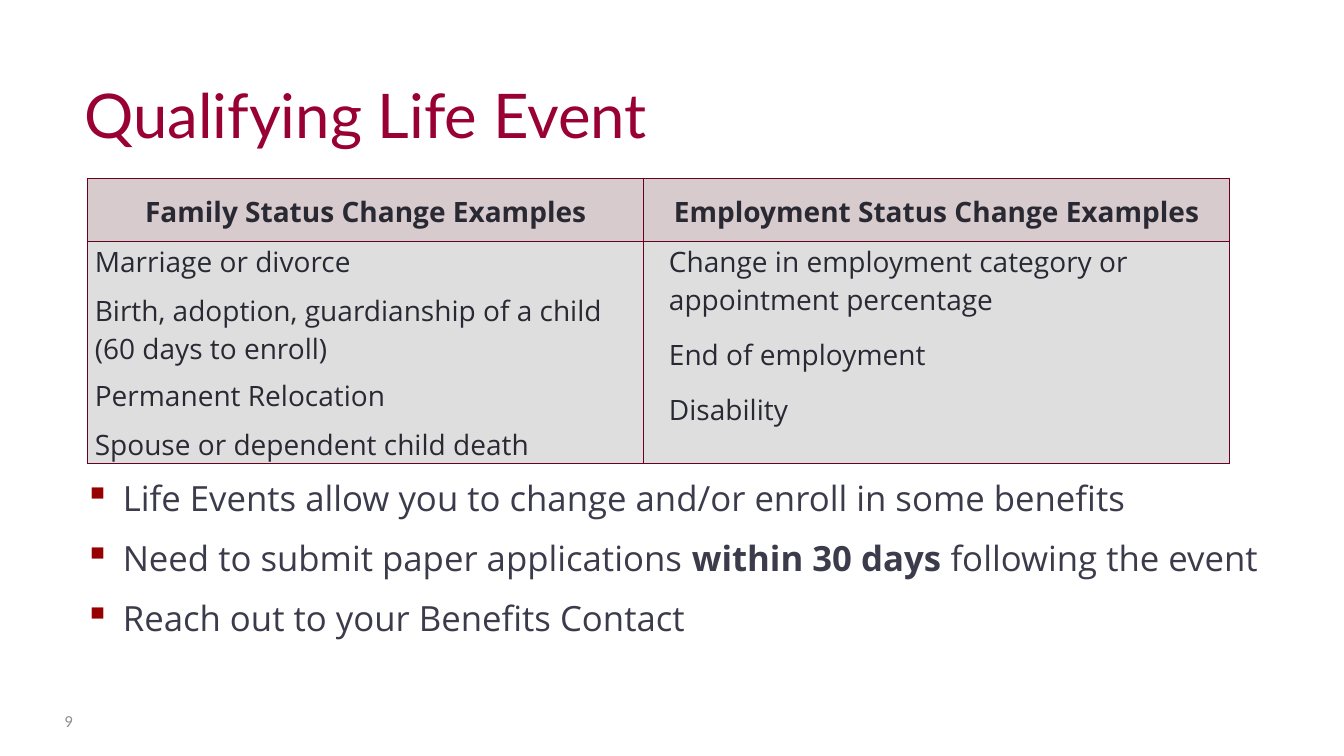
from lxml import etree
from pptx import Presentation, util as u
from pptx.dml.color import RGBColor
from pptx.enum import text as t
from pptx.oxml import ns

WINE = RGBColor(0x99, 0x00, 0x33)
EDGE = RGBColor(0x68, 0x00, 0x1F)
MARK = RGBColor(0x96, 0x00, 0x00)
INK = RGBColor(0x29, 0x29, 0x34)
SLATE = RGBColor(0x3B, 0x3B, 0x4B)
GRAY = RGBColor(0x8E, 0x8E, 0x90)
ROSE = RGBColor(0xD8, 0xCB, 0xCD)
PALE = RGBColor(0xDE, 0xDE, 0xDE)

WIDE, HIGH = u.Inches(13.33), u.Inches(7.5)
HEADS = ["Family Status Change Examples", "Employment Status Change Examples"]
FAMILY = [
    ("Marriage or divorce", 8),
    ("Birth, adoption, guardianship of a child (60 days to enroll)", 6),
    ("Permanent Relocation", 8),
    ("Spouse or dependent child death", 8),
]
JOBS = [
    "Change in employment category or appointment percentage",
    "End of employment",
    "Disability",
]
POINTS = [
    [("Life Events allow you to change and/or enroll in some benefits", False)],
    [("Need to submit paper applications ", False), ("within 30 days ", True),
     ("following the event", False)],
    [("Reach out to your Benefits Contact", False)],
]


def share(left, top, width, height):
    return (int(WIDE * left / 100), int(HIGH * top / 100),
            int(WIDE * width / 100), int(HIGH * height / 100))


def style(par, name, size, color, bold=False):
    font = par.font
    font.name, font.size, font.bold = name, u.Pt(size), bold
    font.color.rgb = color


def frame(slide, box, anchor):
    body = slide.shapes.add_textbox(*box).text_frame
    body.word_wrap = True
    body.vertical_anchor = anchor
    return body


def label(slide, box, words, anchor, *look):
    par = frame(slide, box, anchor).paragraphs[0]
    par.add_run().text = words
    style(par, *look)


def lines(body, count):
    return [body.paragraphs[0]] + [body.add_paragraph() for _ in range(count - 1)]


def solid(parent, color):
    fill = etree.SubElement(parent, ns.qn("a:solidFill"))
    etree.SubElement(fill, ns.qn("a:srgbClr"), val=str(color))


def dress(cell, color):
    cell.fill.solid()
    cell.fill.fore_color.rgb = color
    cell.margin_left = cell.margin_right = u.Inches(0.07)
    cell.margin_top, cell.margin_bottom = u.Inches(0.01), 0
    props = cell._tc.get_or_add_tcPr()
    for spot, side in enumerate("LRTB"):
        line = etree.Element(ns.qn("a:ln" + side), w=str(u.Pt(1)))
        solid(line, EDGE)
        props.insert(spot, line)


def events(slide, box):
    table = slide.shapes.add_table(2, 2, *box).table
    for col, part in zip(table.columns, (0.487, 0.513)):
        col.width = int(box[2] * part)
    for row, part in zip(table.rows, (0.22, 0.78)):
        row.height = int(box[3] * part)
    for col, head in enumerate(HEADS):
        cell = table.cell(0, col)
        dress(cell, ROSE)
        cell.vertical_anchor = t.MSO_ANCHOR.MIDDLE
        par = cell.text_frame.paragraphs[0]
        par.add_run().text = head
        par.alignment = t.PP_ALIGN.CENTER
        par.line_spacing, par.space_after = 1.07, u.Pt(8)
        style(par, "Open Sans", 20, INK, True)
    sides = ([(words, 0, after, 0) for words, after in FAMILY],
             [(words, 6 if i else 0, 6, 0.18) for i, words in enumerate(JOBS)])
    for col, items in enumerate(sides):
        cell = table.cell(1, col)
        dress(cell, PALE)
        for par, item in zip(lines(cell.text_frame, len(items)), items):
            words, before, after, indent = item
            par.add_run().text = words
            par.space_before, par.space_after = u.Pt(before), u.Pt(after)
            par._p.get_or_add_pPr().set("marL", str(u.Inches(indent)))
            style(par, "Open Sans", 20, INK)


def bullet(par):
    props = par._p.get_or_add_pPr()
    props.set("marL", str(u.Inches(0.38)))
    props.set("indent", str(-u.Inches(0.38)))
    tint = etree.SubElement(props, ns.qn("a:buClr"))
    etree.SubElement(tint, ns.qn("a:srgbClr"), val=str(MARK))
    etree.SubElement(props, ns.qn("a:buChar"), char="▪")


def notes(slide, box):
    body = frame(slide, box, t.MSO_ANCHOR.TOP)
    for par, runs in zip(lines(body, len(POINTS)), POINTS):
        bullet(par)
        par.space_after = u.Pt(13)
        style(par, "Open Sans", 24.8, SLATE)
        for words, bold in runs:
            run = par.add_run()
            run.text = words
            if bold:
                run.font.bold = True


def main():
    deck = Presentation()
    deck.slide_width, deck.slide_height = WIDE, HIGH
    slide = deck.slides.add_slide(deck.slide_layouts[6])
    label(slide, share(5.55, 4, 89.57, 16.67), "Qualifying Life Event",
          t.MSO_ANCHOR.BOTTOM, "Lato", 44, WINE)
    events(slide, share(6.53, 23.6, 84.95, 37.75))
    notes(slide, share(5.55, 62.4, 89.57, 27.2))
    label(slide, share(4.05, 92.67, 4.2, 5.33), "9",
          t.MSO_ANCHOR.MIDDLE, "Calibri", 12, GRAY)
    deck.save("out.pptx")


if __name__ == "__main__":
    main()
